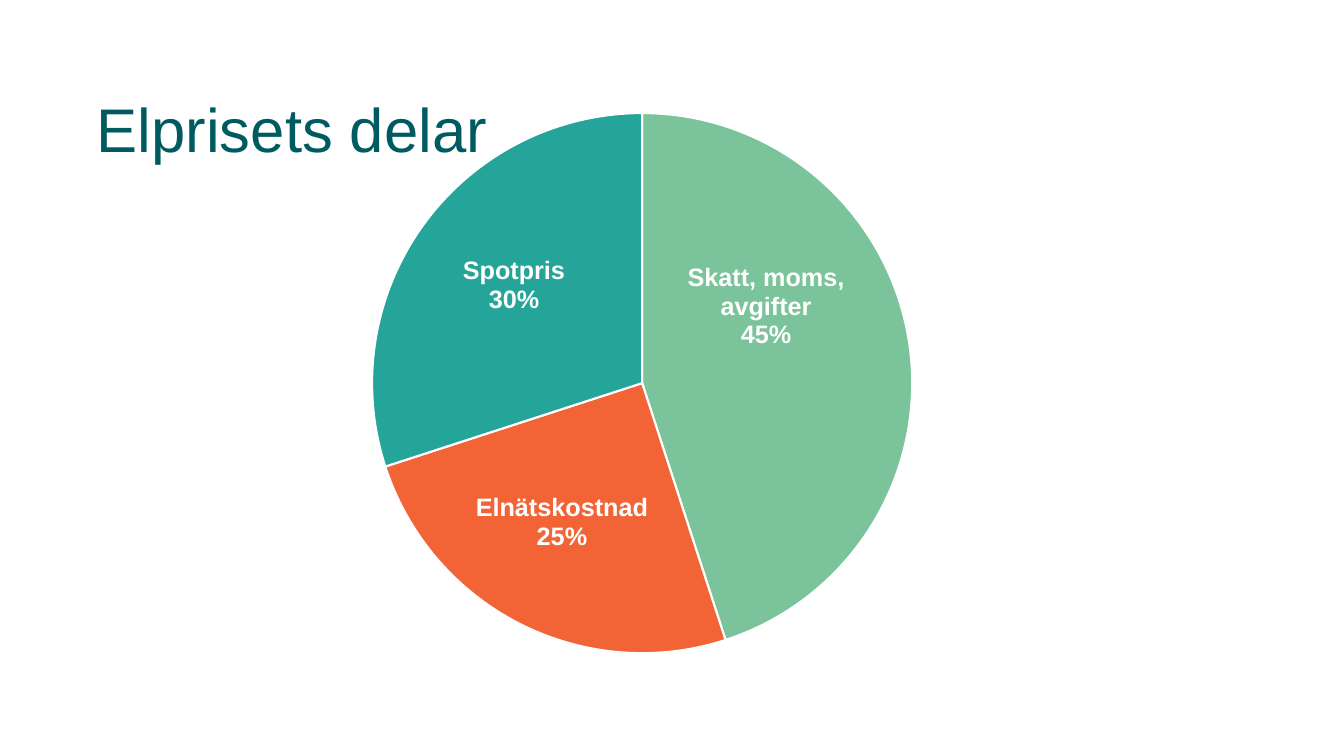
from dataclasses import dataclass

from lxml.etree import SubElement
from pptx import Presentation
from pptx.chart.data import CategoryChartData
from pptx.dml.color import RGBColor as Color
from pptx.enum.chart import XL_CHART_TYPE as ChartType, XL_LABEL_POSITION as LabelPosition
from pptx.enum.text import MSO_ANCHOR as Anchor
from pptx.oxml import parse_xml
from pptx.oxml.ns import nsdecls, qn
from pptx.util import Pt

# Content: category, percent, slice colour, label shift as a share of the chart
TITLE = "Elprisets delar"
SLICES = [
    ("Skatt, moms, avgifter", 45, "7BC39A", (-0.01, -0.09)),
    ("Elnätskostnad", 25, "F26436", (-0.02, 0.03)),
    ("Spotpris", 30, "25A49A", (-0.02, -0.03)),
]


@dataclass(frozen=True)
class Theme:
    font: str = "Arial"
    title_color: str = "005B60"
    white: str = "FFFFFF"
    title_size: int = 44
    label_size: int = 18
    base_size: int = 10


THEME = Theme()
SLIDE_SIZE = (960, 540)
TITLE_BOX = (62, 42.5, 803, 104.5)
CHART_BOX = (142, 67.5, 676, 443.5)
PIE_LEFT, PIE_TOP, PIE_SIZE = 266, 81, 386


def style_font(font, size, color, bold=False):
    font.name, font.size, font.bold = THEME.font, Pt(size), bold
    font.color.rgb = Color.from_string(color)


def manual_layout(**values):
    entries = "".join(f'<c:{tag} val="{value}"/>' for tag, value in values.items())
    return parse_xml(f'<c:layout {nsdecls("c")}><c:manualLayout>{entries}'
                     '</c:manualLayout></c:layout>')


def show_name_and_percent(element):
    """Show category and percent on separate lines."""
    for tag, value in (("showVal", "0"), ("showCatName", "1"), ("showPercent", "1")):
        element.find(qn(f"c:{tag}")).set("val", value)
    separator = SubElement(element, qn("c:separator"))
    separator.text = "\n"
    element.find(qn("c:showPercent")).getnext().addnext(separator)


def add_title(slide):
    title = slide.shapes.title
    title.left, title.top, title.width, title.height = map(Pt, TITLE_BOX)
    frame = title.text_frame
    frame.word_wrap = True
    frame.vertical_anchor = Anchor.MIDDLE
    paragraph = frame.paragraphs[0]
    paragraph.line_spacing = 0.9
    # Left alignment (1) overrides the centred template title
    paragraph.alignment = 1
    run = paragraph.add_run()
    run.text = TITLE
    style_font(run.font, THEME.title_size, THEME.title_color)


def add_pie(slide):
    data = CategoryChartData()
    data.categories = [name for name, *_ in SLICES]
    data.add_series("Series 1", [percent for _, percent, *_ in SLICES])
    chart = slide.shapes.add_chart(ChartType.PIE, *map(Pt, CHART_BOX), data).chart
    chart.has_legend = chart.has_title = False
    style_font(chart.font, THEME.base_size, "000000")

    # Pie position inside the chart frame
    left, top, width, height = CHART_BOX
    plot = chart.plots[0]
    plot.vary_by_categories = True
    plot_area = chart._chartSpace.chart.plotArea
    for old_layout in plot_area.findall(qn("c:layout")):
        plot_area.remove(old_layout)
    plot_area.insert(0, manual_layout(
        layoutTarget="inner", xMode="edge", yMode="edge",
        x=round((PIE_LEFT - left) / width, 3), y=round((PIE_TOP - top) / height, 3),
        w=round(PIE_SIZE / width, 3), h=round(PIE_SIZE / height, 3)))

    # Shared label style
    series = plot.series[0]
    labels = series.data_labels
    style_font(labels.font, THEME.label_size, THEME.white, bold=True)
    labels.position = LabelPosition.CENTER
    show_name_and_percent(labels._element)

    # Slices and their shifted labels
    for index, (_, _, color, (shift_x, shift_y)) in enumerate(SLICES):
        point = series.points[index]
        point.format.fill.solid()
        point.format.fill.fore_color.rgb = Color.from_string(color)
        point.format.line.width = Pt(1.5)
        point.format.line.color.rgb = Color.from_string(THEME.white)
        label = point.data_label
        style_font(label.font, THEME.label_size, THEME.white, bold=True)
        label.position = LabelPosition.CENTER
        element = labels._element.findall(qn("c:dLbl"))[index]
        element.find(qn("c:idx")).addnext(manual_layout(x=shift_x, y=shift_y))
        show_name_and_percent(element)


def main():
    presentation = Presentation()
    presentation.slide_width, presentation.slide_height = map(Pt, SLIDE_SIZE)
    slide = presentation.slides.add_slide(presentation.slide_layouts[5])
    add_title(slide)
    add_pie(slide)
    presentation.save("out.pptx")


if __name__ == "__main__":
    main()
